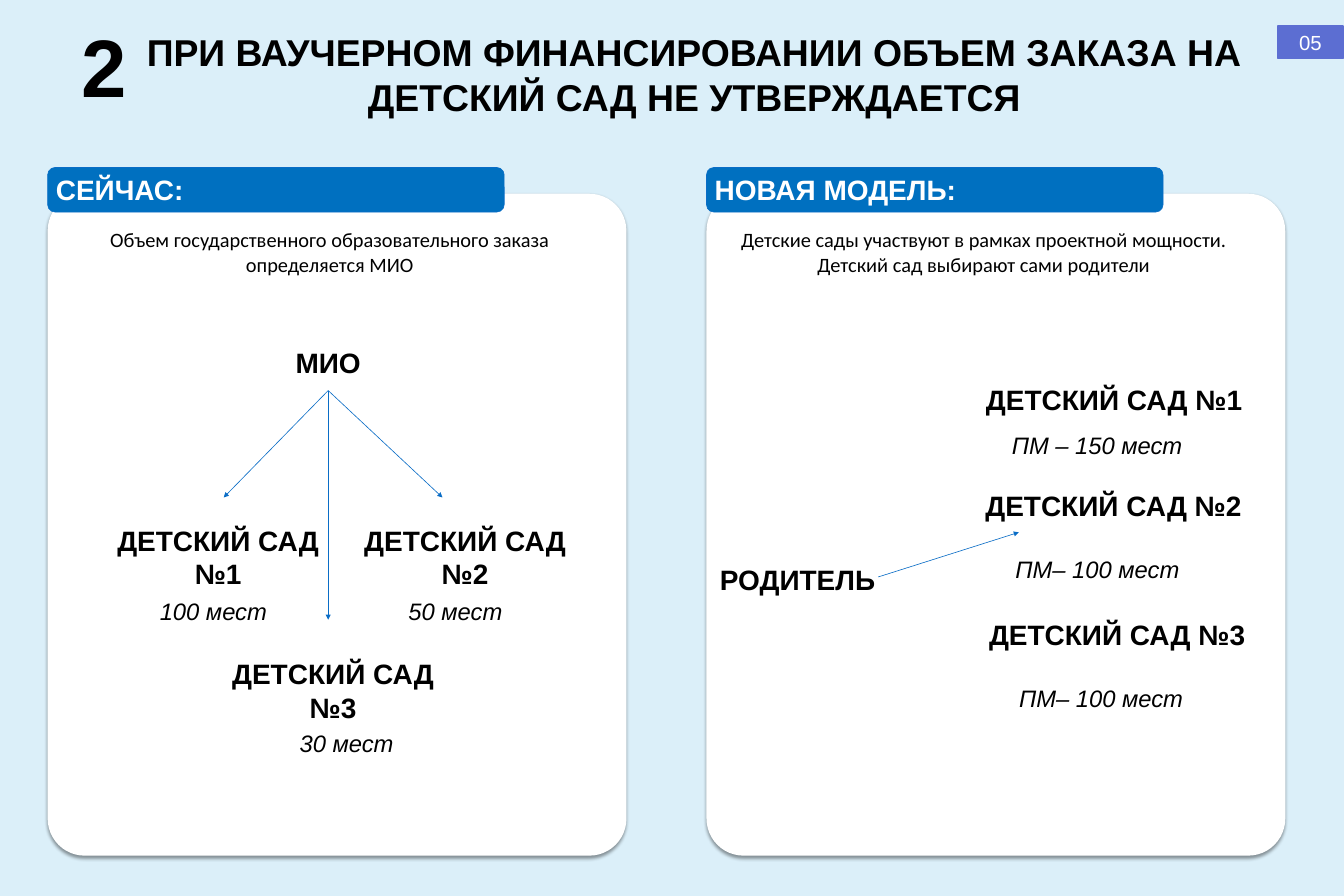
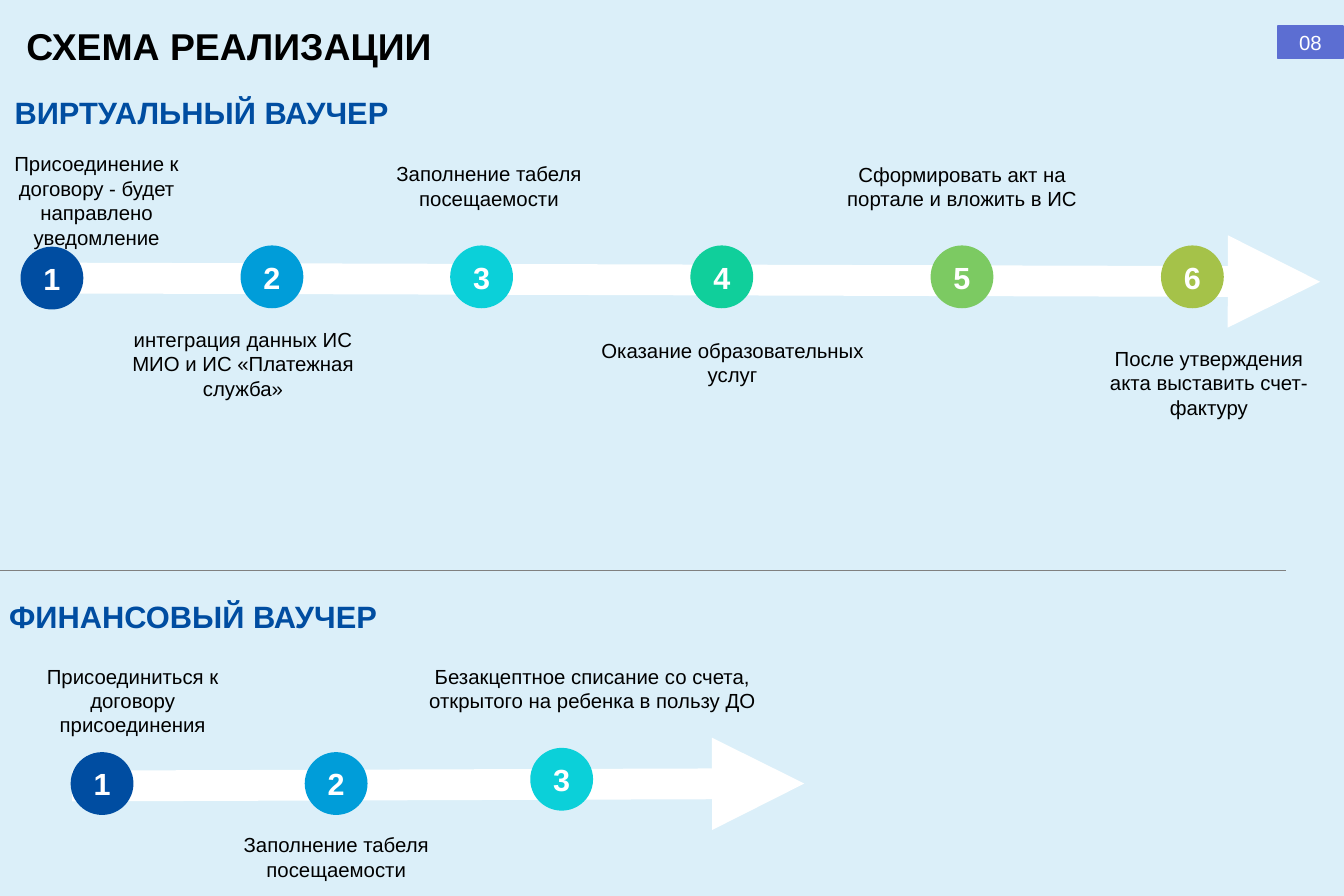
from lxml.etree import SubElement
from pptx import Presentation
from pptx.dml.color import RGBColor
from pptx.enum.shapes import MSO_CONNECTOR, MSO_SHAPE
from pptx.enum.text import MSO_ANCHOR, MSO_AUTO_SIZE, PP_ALIGN
from pptx.oxml import parse_xml
from pptx.oxml.ns import nsdecls, qn
from pptx.util import Inches, Pt

HUE = {"back": "DBEFF9", "white": "FFFFFF", "black": "000000", "bar": "0070C0",
       "edge": "0A6DC6", "badge": "5C6ED2", "navy": "004DA1", "rule": "808080"}
STEPS = ["004DA1", "009DD9", "0BD0D9", "10CF9B", "7CCA62", "A5C249"]
FONT = {
    "title": {"size": Pt(44), "bold": True, "name": "Arial"},
    "big": {"size": Pt(96), "bold": True, "name": "Arial"},
    "head": {"size": Pt(33), "bold": True, "name": "Arial"},
    "seats": {"size": Pt(28), "italic": True, "name": "Arial"},
    "lead": {"size": Pt(24), "name": "Calibri"},
    "part": {"size": Pt(36.3), "bold": True, "name": "Arial"},
    "note": {"size": Pt(24), "name": "Arial"},
    "step": {"size": Pt(36), "bold": True, "name": "Arial"},
}
MID, LEFT = PP_ALIGN.CENTER, PP_ALIGN.LEFT


def put(shape, words, font, hue="black", align=MID):
    """Write one formatted paragraph into a shape."""
    frame = shape.text_frame
    frame.word_wrap = True
    para = frame.paragraphs[0]
    para.alignment = align
    run = para.add_run()
    run.text = words
    for key, val in FONT[font].items():
        setattr(run.font, key, val)
    run.font.color.rgb = RGBColor.from_string(HUE[hue])
    return shape


def link(slide, start, end, hue, width=0.75, tip=True):
    """Draw a straight line, with an arrowhead if tip is set."""
    line = slide.shapes.add_connector(MSO_CONNECTOR.STRAIGHT, *map(Inches, start + end))
    line.line.color.rgb = RGBColor.from_string(HUE[hue])
    line.line.width = Pt(width)
    if tip:
        SubElement(line.line._get_or_add_ln(), qn("a:tailEnd"), type="triangle")
    SubElement(line._element.spPr, qn("a:effectLst"))


deck = Presentation()
deck.slide_width, deck.slide_height = Inches(21.99), Inches(14.66)
fill = deck.slide_master.background.fill
fill.solid()
fill.fore_color.rgb = RGBColor.from_string(HUE["back"])

# Title and page badge on both slides
pages = []
for words, spot, align, num in [
    ("ПРИ ВАУЧЕРНОМ ФИНАНСИРОВАНИИ ОБЪЕМ ЗАКАЗА НА ДЕТСКИЙ САД НЕ УТВЕРЖДАЕТСЯ",
     (2.2, 0.43, 18.33, 1.58), MID, "05"),
    ("СХЕМА РЕАЛИЗАЦИИ", (0.33, 0.33, 6.9, 0.84), LEFT, "08"),
]:
    page = deck.slides.add_slide(deck.slide_layouts[5])
    title = page.shapes.title
    title.left, title.top, title.width, title.height = map(Inches, spot)
    put(title, words, "title", align=align)
    title.text_frame.vertical_anchor = MSO_ANCHOR.TOP
    title.text_frame.auto_size = MSO_AUTO_SIZE.NONE
    badge = page.shapes.add_shape(MSO_SHAPE.RECTANGLE, *map(Inches, (20.91, 0.42, 1.06, 0.54)))
    badge.shadow.inherit = False
    badge.fill.solid()
    badge.fill.fore_color.rgb = badge.line.color.rgb = RGBColor.from_string(HUE["badge"])
    badge.line.width = Pt(2)
    put(badge, num, "note", "white")
    pages.append(page)
model, scheme = pages

# Two cards with a header bar each
for left, words in [(0.78, "СЕЙЧАС:"), (11.56, "НОВАЯ МОДЕЛЬ:")]:
    card, bar = [model.shapes.add_shape(MSO_SHAPE.ROUNDED_RECTANGLE, *map(Inches, spot))
                 for spot in [(left, 3.17, 9.47, 10.83), (left, 2.74, 7.47, 0.73)]]
    for shape, hue in [(card, "white"), (bar, "bar")]:
        shape.shadow.inherit = False
        shape.fill.solid()
        shape.fill.fore_color.rgb = RGBColor.from_string(HUE[hue])
    card.adjustments[0] = 0.064
    card.line.fill.background()
    card._element.spPr.find(qn("a:effectLst")).append(parse_xml(
        f'<a:outerShdw {nsdecls("a")} blurRad="{Pt(4)}" dist="{Pt(3)}" dir="5400000">'
        f'<a:srgbClr val="{HUE["black"]}"><a:alpha val="40000"/></a:srgbClr></a:outerShdw>'))
    bar.line.color.rgb = RGBColor.from_string(HUE["edge"])
    bar.line.width = Pt(0.75)
    put(bar, words, "head", "white", LEFT)

# Texts on the cards
for font, left, top, wide, high, words in [
    ("big", 1.24, 0.22, 0.58, 1.72, "2"),
    ("lead", 0.96, 3.67, 8.87, 0.91,
     "Объем государственного образовательного заказа определяется МИО"),
    ("head", 4.44, 5.61, 1.86, 0.66, "МИО"),
    ("head", 1.78, 8.51, 3.58, 1.21, "ДЕТСКИЙ САД №1"),
    ("seats", 2.33, 9.71, 2.32, 0.57, "100 мест"),
    ("head", 5.82, 8.51, 3.58, 1.21, "ДЕТСКИЙ САД №2"),
    ("seats", 6.29, 9.71, 2.32, 0.57, "50 мест"),
    ("head", 3.66, 10.7, 3.58, 1.21, "ДЕТСКИЙ САД №3"),
    ("seats", 4.51, 11.88, 2.32, 0.57, "30 мест"),
    ("lead", 11.66, 3.67, 8.87, 0.91,
     "Детские сады участвуют в рамках проектной мощности. Детский сад выбирают сами родители"),
    ("head", 11.53, 9.15, 3.04, 0.66, "РОДИТЕЛЬ"),
    ("head", 15.49, 6.21, 5.48, 0.66, "ДЕТСКИЙ САД №1"),
    ("seats", 15.82, 7, 4.26, 0.57, "ПМ – 150 мест"),
    ("head", 15.48, 7.95, 5.48, 0.66, "ДЕТСКИЙ САД №2"),
    ("seats", 16.47, 9.02, 2.97, 0.57, "ПМ– 100 мест"),
    ("head", 15.54, 10.06, 5.48, 0.66, "ДЕТСКИЙ САД №3"),
    ("seats", 16.53, 11.14, 2.97, 0.57, "ПМ– 100 мест"),
]:
    put(model.shapes.add_textbox(*map(Inches, (left, top, wide, high))), words, font,
        align=LEFT if font == "big" else MID)

# Arrows from the payer to the kindergartens
for end in [(3.66, 8.14), (7.24, 8.14), (5.37, 10.14)]:
    link(model, (5.37, 6.39), end, "edge")
link(model, (14.37, 9.44), (16.67, 8.71), "edge")

# Two timelines: heading, notes, arrow, numbered steps
link(scheme, (0, 9.33), (21.04, 9.33), "rule", tip=False)
for words, spot, notes, start, end, dots in [
    ("ВИРТУАЛЬНЫЙ ВАУЧЕР", (0.14, 1.48), [
        (-0.5, 2.43, 4.16, 1.72, "Присоединение к договору - будет направлено уведомление"),
        (1.77, 5.3, 4.41, 1.31, "интеграция данных ИС МИО и ИС «Платежная служба»"),
        (6.14, 2.59, 3.72, 0.91, "Заполнение табеля посещаемости"),
        (9.36, 5.48, 5.25, 0.91, "Оказание образовательных услуг"),
        (13.53, 2.6, 4.42, 0.91, "Сформировать акт на портале и вложить в ИС"),
        (17.78, 5.61, 4, 1.31, "После утверждения акта выставить счет-фактуру"),
    ], (1.18, 4.55), (21.6, 4.61),
     [(0.35, 4.05), (3.95, 4.03), (7.38, 4.03), (11.31, 4.03), (15.24, 4.03), (19.01, 4.03)]),
    ("ФИНАНСОВЫЙ ВАУЧЕР", (0.05, 9.73), [
        (0.5, 10.81, 3.34, 1.31, "Присоединиться к договору присоединения"),
        (3.29, 13.57, 4.42, 0.91, "Заполнение табеля посещаемости"),
        (6.74, 10.81, 5.9, 0.91,
         "Безакцептное списание со счета, открытого на ребенка в пользу ДО"),
    ], (1.18, 12.86), (13.16, 12.82), [(1.17, 12.32), (5, 12.32), (8.69, 12.25)]),
]:
    put(scheme.shapes.add_textbox(*map(Inches, spot + (9.72, 0.71))), words, "part", "navy", LEFT)
    for *area, note in notes:
        put(scheme.shapes.add_textbox(*map(Inches, area)), note, "note")
    link(scheme, start, end, "white", 36.25)
    for num, (dot, hue) in enumerate(zip(dots, STEPS), 1):
        disc = scheme.shapes.add_shape(MSO_SHAPE.OVAL, *map(Inches, dot + (1, 1)))
        disc.shadow.inherit = False
        disc.fill.solid()
        disc.fill.fore_color.rgb = disc.line.color.rgb = RGBColor.from_string(hue)
        disc.line.width = Pt(2)
        put(disc, str(num), "step", "white")

deck.save("out.pptx")
